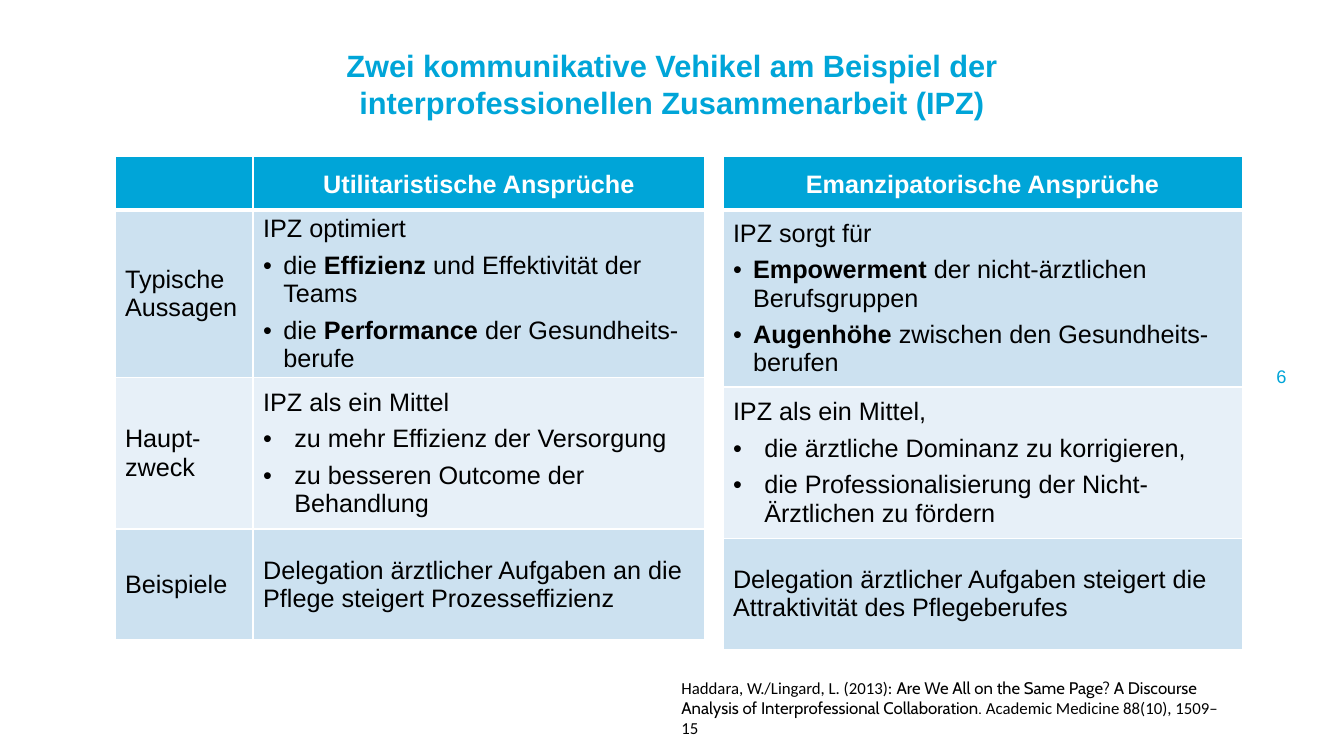
from dataclasses import dataclass
from typing import Any

from lxml import etree
from pptx import Presentation
from pptx import util as u
from pptx.dml.color import RGBColor
from pptx.enum import text
from pptx.oxml import ns

COLORS = {"blue": "00A5D8", "dark": "CCE1F0", "light": "E7F0F8",
          "white": "FFFFFF", "black": "000000"}
ROW_FILLS = ("blue", "dark", "light", "dark")


@dataclass(frozen=True)
class Span:
    words: str
    bold: bool = False
    font: str = "Arial"


@dataclass(frozen=True)
class Line:
    spans: tuple[Span, ...]
    indent: float = 0


@dataclass(frozen=True)
class Claims:
    left: float
    widths: tuple[float, ...]
    heights: tuple[float, ...]
    rows: tuple[tuple[tuple[Line, ...], ...], ...]


def line(*words: str, indent: float = 0) -> Line:
    return Line(tuple(Span(word, index == 1) for index, word in enumerate(words)), indent)


TABLES = (
    Claims(1.14, (1.37, 4.48), (0.53, 1.66, 1.5, 1.1), (
        ((), (line("Utilitaristische Ansprüche"),)),
        ((line("Typische Aussagen"),),
         (line("IPZ optimiert"),
          line("die ", "Effizienz", " und Effektivität der Teams", indent=0.2),
          line("die ", "Performance", " der Gesundheits-berufe", indent=0.2))),
        ((line("Haupt-zweck"),),
         (line("IPZ als ein Mittel"),
          line("zu mehr Effizienz der Versorgung", indent=0.31),
          line("zu besseren Outcome der Behandlung", indent=0.31))),
        ((line("Beispiele"),),
         (line("Delegation ärztlicher Aufgaben an die Pflege steigert Prozesseffizienz"),)),
    )),
    Claims(7.17, (5.15,), (0.53, 1.76, 1.5, 1.1), (
        ((line("Emanzipatorische Ansprüche"),),),
        ((line("IPZ sorgt für"),
          line("", "Empowerment", " der nicht-ärztlichen Berufsgruppen", indent=0.2),
          line("", "Augenhöhe", " zwischen den Gesundheits-berufen", indent=0.2)),),
        ((line("IPZ als ein Mittel,"),
          line("die ärztliche Dominanz zu korrigieren,", indent=0.31),
          line("die Professionalisierung der Nicht-Ärztlichen zu fördern", indent=0.31)),),
        ((line("Delegation ärztlicher Aufgaben steigert die Attraktivität des Pflegeberufes"),),),
    )),
)
REFERENCE = Line((
    Span("Haddara, W./Lingard, L. (2013): ", font="Calibri"),
    Span("Are We All on the Same Page? A Discourse Analysis of "
         "Interprofessional Collaboration. ", font="Cabin"),
    Span("Academic Medicine 88(10), 1509–15", font="Calibri"),
))


def assign(target: Any, values: dict[str, Any]) -> None:
    for name, value in values.items():
        setattr(target, name, value)


def color(name: str) -> RGBColor:
    return RGBColor.from_string(COLORS[name])


def write(para: Any, content: Line, size: float, ink: str, bold: bool = False) -> None:
    for item in content.spans:
        if item.words:
            span = para.add_run()
            span.text = item.words
            assign(span.font, {"name": item.font, "size": u.Pt(size),
                               "bold": bold or item.bold})
            span.font.color.rgb = color(ink)


def add_bullet(para: Any, indent: float) -> None:
    properties = para._p.get_or_add_pPr()
    properties.set("marL", str(u.Inches(indent)))
    properties.set("indent", str(-u.Inches(indent)))
    etree.SubElement(properties, ns.qn("a:buFont")).set("typeface", "Arial")
    etree.SubElement(properties, ns.qn("a:buChar")).set("char", "•")


def add_borders(cell: Any, row: int) -> None:
    widths = {"lnL": 1, "lnR": 1, "lnT": 3 if row == 1 else 1, "lnB": 3 if row == 0 else 1}
    properties = cell._tc.get_or_add_tcPr()
    for side, width in widths.items():
        border = etree.SubElement(properties, ns.qn(f"a:{side}"))
        border.set("w", str(u.Pt(width)))
        fill = etree.SubElement(border, ns.qn("a:solidFill"))
        etree.SubElement(fill, ns.qn("a:srgbClr")).set("val", COLORS["white"])


def fill_cell(cell: Any, lines: tuple[Line, ...], row: int) -> None:
    add_borders(cell, row)
    cell.fill.solid()
    cell.fill.fore_color.rgb = color(ROW_FILLS[row])
    assign(cell, {"vertical_anchor": text.MSO_ANCHOR.MIDDLE,
                  "margin_top": 0, "margin_bottom": 0})
    header = row == 0
    for index, content in enumerate(lines):
        para = cell.text_frame.add_paragraph() if index else cell.text_frame.paragraphs[0]
        values: dict[str, Any] = {"space_before": u.Pt(3 if index else 0)}
        if len(lines) > 1:
            values["space_after"] = u.Pt(3)
        if header:
            values |= {"alignment": text.PP_ALIGN.CENTER, "line_spacing": 1.1}
        assign(para, values)
        if content.indent:
            add_bullet(para, content.indent)
        write(para, content, 18, "white" if header else "black", header)


def add_claims(page: Any, claims: Claims) -> None:
    grid = page.shapes.add_table(
        len(claims.heights), len(claims.widths), u.Inches(claims.left), u.Inches(1.55),
        u.Inches(sum(claims.widths)), u.Inches(sum(claims.heights))).table
    for column, width in zip(grid.columns, claims.widths):
        column.width = u.Inches(width)
    for row, height in enumerate(claims.heights):
        grid.rows[row].height = u.Inches(height)
        for column, lines in enumerate(claims.rows[row]):
            fill_cell(grid.cell(row, column), lines, row)


def add_box(page: Any, place: tuple[float, ...], content: Line, size: float,
            ink: str, frame: dict[str, Any], align: Any) -> None:
    box = page.shapes.add_textbox(*map(u.Inches, place))
    assign(box.text_frame, {"word_wrap": True} | frame)
    para = box.text_frame.paragraphs[0]
    para.alignment = align
    write(para, content, size, ink)


def main() -> None:
    deck = Presentation()
    assign(deck, {"slide_width": u.Inches(13.33), "slide_height": u.Inches(7.5)})
    page = deck.slides.add_slide(deck.slide_layouts.get_by_name("Title Only"))
    flush = dict.fromkeys(("margin_left", "margin_right", "margin_top", "margin_bottom"), 0)

    title = page.shapes.title
    assign(title, {"left": u.Inches(2.21), "top": u.Inches(0),
                   "width": u.Inches(8.91), "height": u.Inches(1.66)})
    assign(title.text_frame, flush | {"word_wrap": True, "auto_size": text.MSO_AUTO_SIZE.NONE,
                                      "vertical_anchor": text.MSO_ANCHOR.MIDDLE})
    heading = title.text_frame.paragraphs[0]
    heading.alignment = text.PP_ALIGN.CENTER
    write(heading, line("Zwei kommunikative Vehikel am Beispiel der "
                        "interprofessionellen Zusammenarbeit (IPZ)"), 22, "blue", True)

    add_box(page, (11.46, 3.62, 1.3, 0.24), line("6"), 13, "blue", flush, text.PP_ALIGN.RIGHT)
    for claims in TABLES:
        add_claims(page, claims)
    add_box(page, (6.66, 6.67, 5.67, 0.5), REFERENCE, 12, "black",
            {"auto_size": text.MSO_AUTO_SIZE.SHAPE_TO_FIT_TEXT}, text.PP_ALIGN.LEFT)
    deck.save("out.pptx")


if __name__ == "__main__":
    main()
